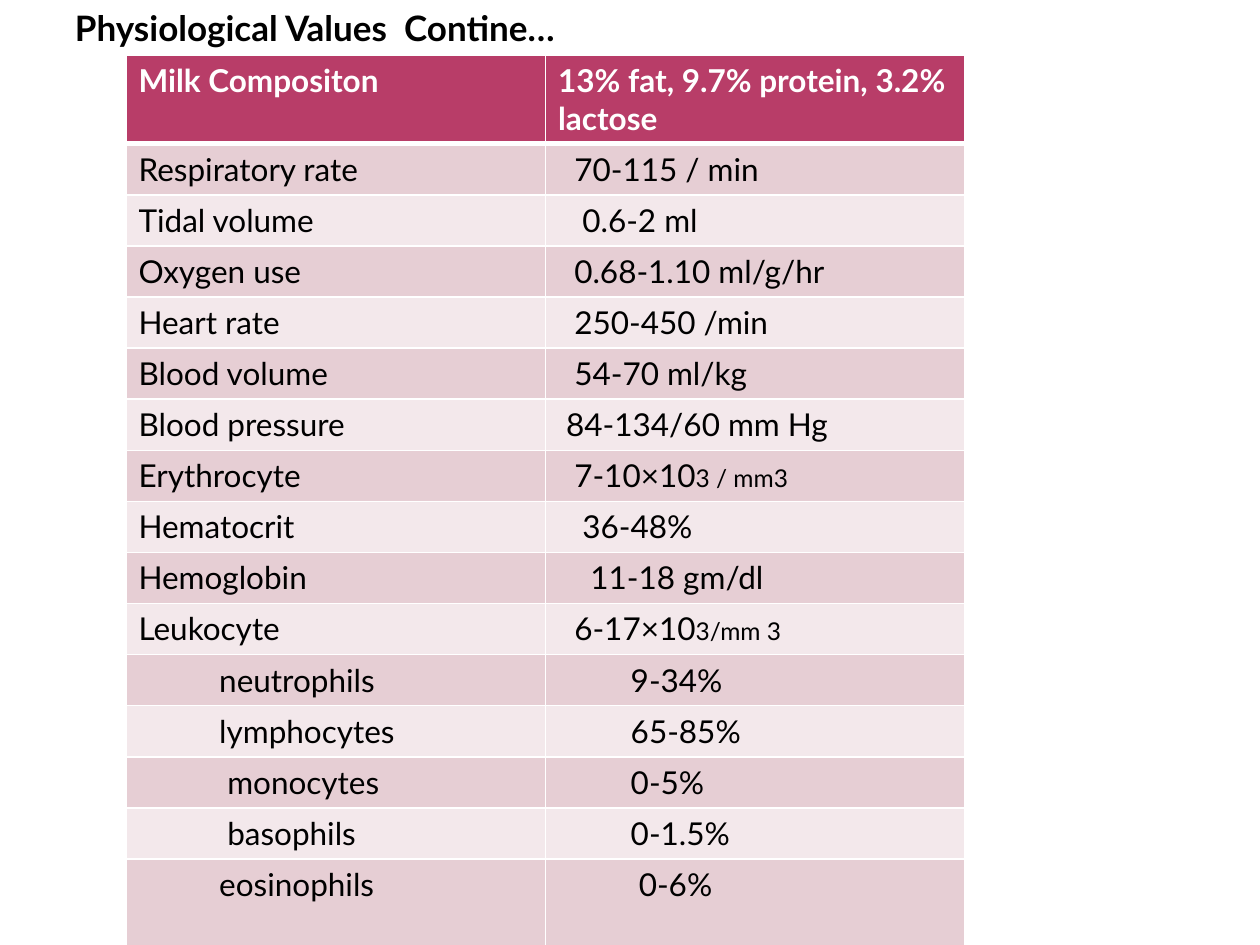
from dataclasses import dataclass

from lxml.etree import SubElement
from pptx import Presentation
from pptx.dml.color import RGBColor as RGB
from pptx.enum.text import PP_ALIGN
from pptx.oxml.ns import qn
from pptx.util import Inches, Pt


@dataclass(frozen=True)
class Theme:
    font: str = "Lato"
    black: str = "000000"
    white: str = "FFFFFF"
    header: str = "B83D68"
    bands: tuple = ("E6CED4", "F3E8EB")
    title: int = 20
    body: int = 18
    small: int = 14


T = Theme()


def style(r, size, color, bold=False):
    r.font.name, r.font.size, r.font.bold = T.font, Pt(size), bold
    r.font.color.rgb = RGB.from_string(color)


def add_border(cell, side, width):
    ln = SubElement(cell._tc.get_or_add_tcPr(), qn(f"a:ln{side}"), w=str(Pt(width)))
    SubElement(SubElement(ln, qn("a:solidFill")), qn("a:srgbClr"), val=T.white)


# Each cell: indent steps, text, optional small text
ROWS = [
    ((0, "Milk Compositon"), (0, "13% fat, 9.7% protein, 3.2% lactose")),
    ((0, "Respiratory rate"), (2, "70-115 / min")),
    ((0, "Tidal volume"), (3, "0.6-2 ml")),
    ((0, "Oxygen use"), (2, "0.68-1.10 ml/g/hr")),
    ((0, "Heart rate"), (2, "250-450 /min")),
    ((0, "Blood volume"), (2, "54-70 ml/kg")),
    ((0, "Blood pressure"), (1, "84-134/60 mm Hg")),
    ((0, "Erythrocyte"), (2, "7-10×10", "3 / mm3")),
    ((0, "Hematocrit"), (3, "36-48%")),
    ((0, "Hemoglobin"), (4, "11-18 gm/dl")),
    ((0, "Leukocyte"), (2, "6-17×10", "3/mm 3")),
    ((10, "neutrophils"), (9, "9-34%")),
    ((10, "lymphocytes"), (9, "65-85%")),
    ((11, "monocytes"), (9, "0-5%")),
    ((11, "basophils"), (9, "0-1.5%")),
    ((10, "eosinophils"), (10, "0-6%")),
]
INDENT = Inches(0.64) / 10

prs = Presentation()
prs.slide_width, prs.slide_height = Inches(10), Inches(7.5)
s = prs.slides.add_slide(prs.slide_layouts[6])

# Title
tf = s.shapes.add_textbox(Inches(-1.75), 0, Inches(8.5), Inches(0.77)).text_frame
tf.word_wrap = True
p = tf.paragraphs[0]
p.text = "Physiological Values  Contine…"
p.alignment = PP_ALIGN.CENTER
style(p.runs[0], T.title, T.black, bold=True)

# Table grid: taller first and last rows, equal rows between
top, height, tall = Inches(0.44), Inches(7.06), Inches(0.69)
table = s.shapes.add_table(len(ROWS), 2, Inches(1), top, Inches(6.66), height).table
for col in table.columns:
    col.width = Inches(3.33)
for row in table.rows:
    row.height = int((height - 2 * tall) / (len(ROWS) - 2))
table.rows[0].height = table.rows[len(ROWS) - 1].height = tall

# Cells
for i, row in enumerate(ROWS):
    is_header = i == 0
    for j, (steps, *texts) in enumerate(row):
        cell = table.cell(i, j)
        for side in "LRTB":
            thick = (i, side) in ((0, "B"), (1, "T"))
            add_border(cell, side, 3 if thick else 1)
        cell.fill.solid()
        fill = T.header if is_header else T.bands[(i - 1) % 2]
        cell.fill.fore_color.rgb = RGB.from_string(fill)
        cell.margin_left = int(Inches(0.1) + steps * INDENT)
        p = cell.text_frame.paragraphs[0]
        for text, size in zip(texts, (T.body, T.small)):
            r = p.add_run()
            r.text = text
            style(r, size, T.white if is_header else T.black, bold=is_header)

prs.save("out.pptx")
